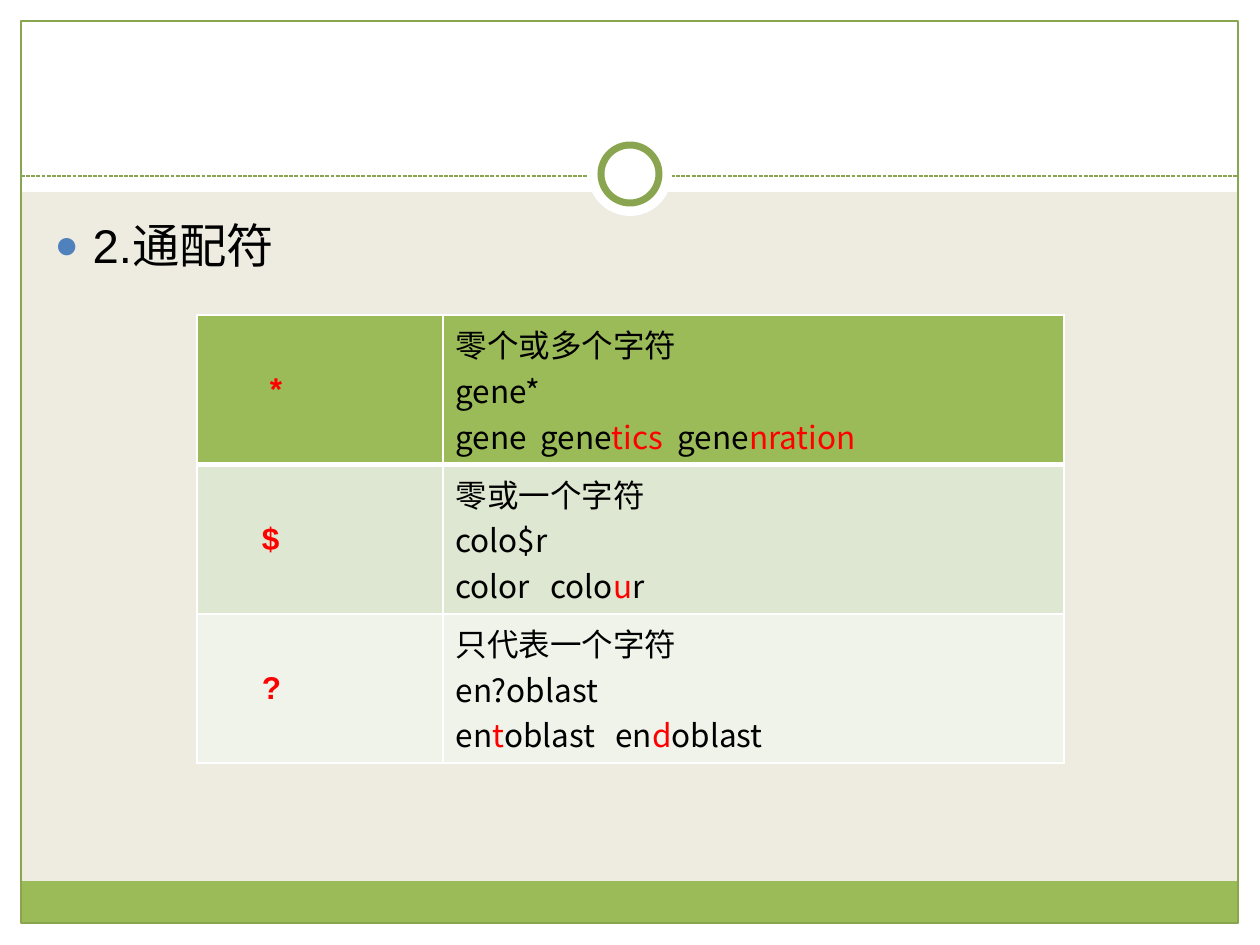
"""Build the wildcard slide: a framed page with a table of search symbols."""
import lxml.etree
import pptx
import pptx.dml.color
import pptx.enum.dml
import pptx.enum.shapes
import pptx.enum.text
import pptx.oxml
import pptx.oxml.ns
import pptx.util

RGBColor = pptx.dml.color.RGBColor
WHITE = RGBColor(0xFF, 0xFF, 0xFF)
BLACK = RGBColor(0, 0, 0)
RED = RGBColor(0xFF, 0, 0)
BEIGE = RGBColor(0xEE, 0xEC, 0xE1)
GREEN = RGBColor(0x9B, 0xBB, 0x59)
DARK_GREEN = RGBColor(0x89, 0xA5, 0x4F)
PALE_GREEN = RGBColor(0xDE, 0xE7, 0xD1)
PALEST_GREEN = RGBColor(0xEF, 0xF3, 0xEA)
BULLET_BLUE = RGBColor(0x4F, 0x81, 0xBD)
CJK_FONT = "Noto Sans CJK SC"
PX = 914400 / 126
SHAPES = pptx.enum.shapes.MSO_SHAPE
NAMESPACE = pptx.oxml.ns.nsdecls("a")


def px(*lengths):
    return [pptx.util.Emu(round(length * PX)) for length in lengths]


def add_element(parent, xml, index=None):
    element = pptx.oxml.parse_xml(xml.replace(" ", f" {NAMESPACE} ", 1))
    parent.insert(len(parent) if index is None else index, element)


presentation = pptx.Presentation()
presentation.slide_width, presentation.slide_height = px(1260, 945)
slide = presentation.slides.add_slide(presentation.slide_layouts[1])
title = slide.shapes.title
title.element.getparent().remove(title.element)
slide.background.fill.solid()
slide.background.fill.fore_color.rgb = BEIGE

frame_parts = [
    (SHAPES.RECTANGLE, (0, 924, 1260, 21), WHITE, 0),
    (SHAPES.RECTANGLE, (0, 0, 1260, 192), WHITE, 0),
    (SHAPES.RECTANGLE, (0, 0, 21, 945), WHITE, 0),
    (SHAPES.RECTANGLE, (1239, 0, 21, 945), WHITE, 0),
    (SHAPES.RECTANGLE, (21, 881, 1217, 43), GREEN, 0),
    (SHAPES.RECTANGLE, (21, 21, 1217, 902), None, 0.75),
    ("divider", (21, 176, 1239, 176), None, 0.75),
    (SHAPES.OVAL, (588, 132, 84, 84), WHITE, 0),
    (SHAPES.OVAL, (601, 145, 58, 58), WHITE, 4),
]
for kind, box, fill_color, line_width in frame_parts:
    if kind == "divider":
        shape = slide.shapes.add_connector(pptx.enum.shapes.MSO_CONNECTOR.STRAIGHT, *px(*box))
        shape.line.dash_style = pptx.enum.dml.MSO_LINE.SQUARE_DOT
        add_element(shape.element.spPr, "<a:effectLst />")
    else:
        shape = slide.shapes.add_shape(kind, *px(*box))
        shape.shadow.inherit = False
        if fill_color is None:
            shape.fill.background()
        else:
            shape.fill.solid()
            shape.fill.fore_color.rgb = fill_color
    if line_width:
        shape.line.color.rgb = DARK_GREEN
        shape.line.width = pptx.util.Pt(line_width)
    else:
        shape.line.fill.background()

body = slide.placeholders[1]
body.left, body.top, body.width, body.height = px(42, 210, 1172, 630)
paragraph = body.text_frame.paragraphs[0]
paragraph.text = "2.通配符"
paragraph.space_before = pptx.util.Pt(5)
paragraph.font.size = pptx.util.Pt(27)
paragraph.font.name = "Arial"
paragraph.font.color.rgb = BLACK
properties = paragraph._p.get_or_add_pPr()
indent = px(38)[0]
properties.set("marL", str(indent))
properties.set("indent", str(-indent))
bullet_xml = [
    f'<a:buClr ><a:srgbClr val="{BULLET_BLUE}"/></a:buClr>',
    '<a:buSzPct val="85000"/>',
    '<a:buFont typeface="Arial"/>',
    '<a:buChar char="●"/>',
]
for offset, xml in enumerate(bullet_xml):
    add_element(properties, xml, len(properties) - 1)

rows = [
    ("*", 73, GREEN, (85, 222), [
        [("零个或多个字符", BLACK)],
        [("gene*", BLACK)],
        [("gene\tgene", BLACK), ("tics\t", RED), ("gene", BLACK), ("nration", RED)],
    ]),
    ("$", 65, PALE_GREEN, (95,), [
        [("零或一个字符", BLACK)],
        [("colo$r", BLACK)],
        [("color\tcolo", BLACK), ("u", RED), ("r", BLACK)],
    ]),
    ("?", 65, PALEST_GREEN, (160,), [
        [("只代表一个字符", BLACK)],
        [("en?oblast", BLACK)],
        [("en", BLACK), ("t", RED), ("oblast\ten", BLACK), ("d", RED), ("oblast", BLACK)],
    ]),
]
table = slide.shapes.add_table(len(rows), 2, *px(197, 315, 867, 441)).table
for column, width in zip(table.columns, px(246, 621)):
    column.width = width
for row_index, (symbol, symbol_inset, fill_color, tab_stops, lines) in enumerate(rows):
    symbol_cell, example_cell = table.rows[row_index].cells
    symbol_cell.margin_left = px(symbol_inset)[0]
    for cell, cell_lines in ((symbol_cell, [[(symbol, RED)]]), (example_cell, lines)):
        is_symbol = cell is symbol_cell
        cell.vertical_anchor = pptx.enum.text.MSO_ANCHOR.MIDDLE
        cell.fill.solid()
        cell.fill.fore_color.rgb = fill_color
        for line_index, line in enumerate(cell_lines):
            if line_index:
                paragraph = cell.text_frame.add_paragraph()
            else:
                paragraph = cell.text_frame.paragraphs[0]
            paragraph.font.size = pptx.util.Pt(18)
            paragraph.font.name = "Arial" if is_symbol else CJK_FONT
            paragraph.font.bold = is_symbol
            for text, color in line:
                run = paragraph.add_run()
                run.text = text
                run.font.color.rgb = color
            if any("\t" in text for text, color in line):
                stops = "".join(f'<a:tab pos="{stop}" algn="l"/>' for stop in px(*tab_stops))
                add_element(paragraph._p.get_or_add_pPr(), f"<a:tabLst >{stops}</a:tabLst>", 0)
        for side_index, side in enumerate("LRTB"):
            thick = (row_index, side) in ((0, "B"), (1, "T"))
            width = pptx.util.Pt(3 if thick else 1)
            add_element(
                cell._tc.get_or_add_tcPr(),
                f'<a:ln{side} w="{width}"><a:solidFill><a:srgbClr val="{WHITE}"/></a:solidFill></a:ln{side}>',
                side_index,
            )

presentation.save("out.pptx")
